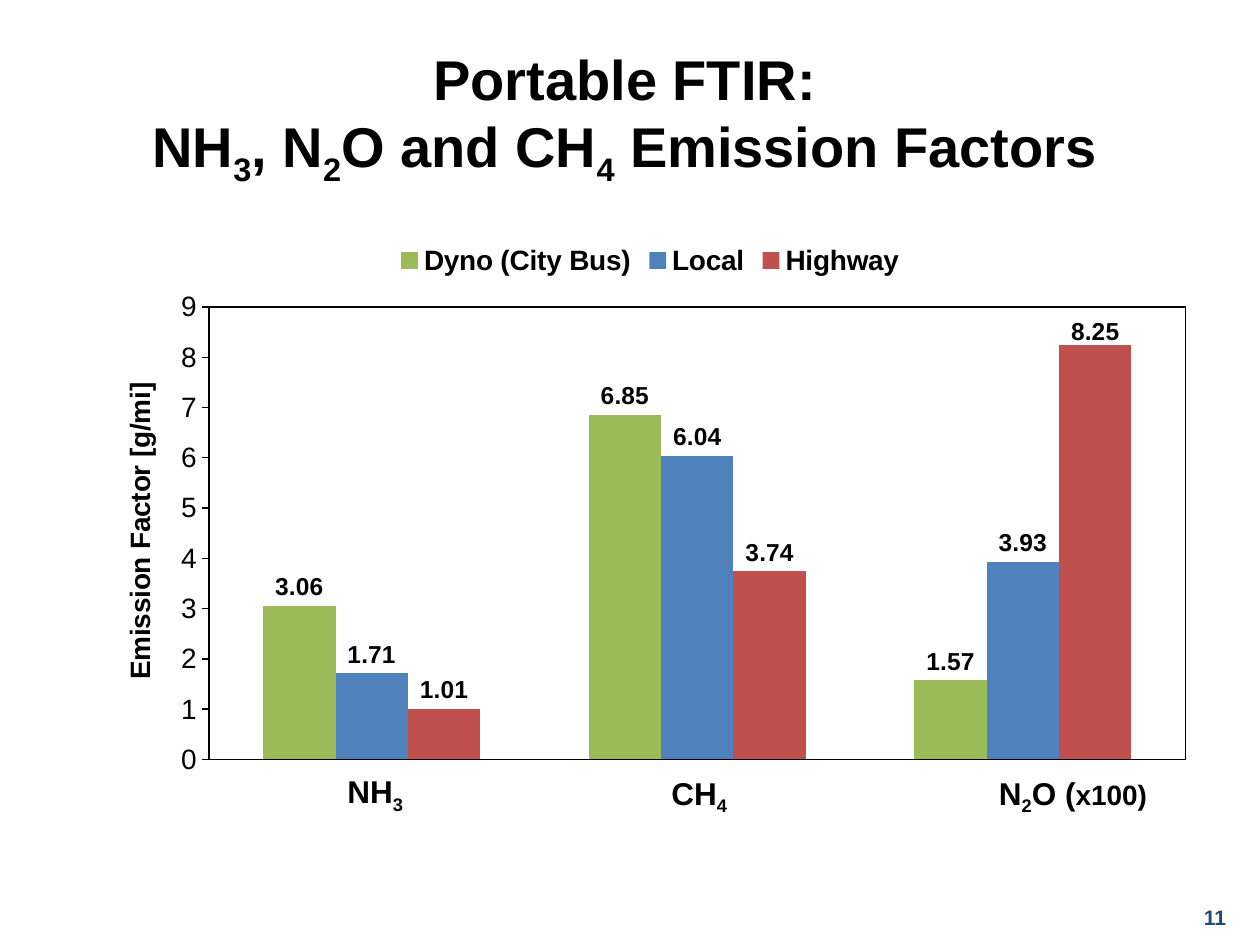
from lxml.etree import SubElement
from pptx import Presentation
from pptx.chart.data import CategoryChartData
from pptx.dml.color import RGBColor
from pptx.enum.chart import (XL_CHART_TYPE, XL_LABEL_POSITION, XL_LEGEND_POSITION,
                             XL_TICK_MARK)
from pptx.enum.text import MSO_ANCHOR, MSO_AUTO_SIZE, PP_ALIGN
from pptx.oxml import parse_xml
from pptx.oxml.ns import nsdecls, qn
from pptx.util import Inches, Pt

BLACK, NAVY = "000000", "1F497D"
# "|" switches between normal text and subscript
TITLE_LINES = ["Portable FTIR:", "NH|3|, N|2|O and CH|4| Emission Factors"]
TITLE_BOX = (0.42, 0.3, 9.08, 1.25)
CHART_BOX = (0.75, 1.83, 8.82, 4.67)
PLOT_SHARES = {"x": 0.103, "y": 0.13, "w": 0.879, "h": 0.769}
AXIS_TITLE = "Emission Factor [g/mi]"
AXIS_TITLE_SHARES = {"x": 0.02, "y": 0.25}
CATEGORIES = ["1", "2", "3"]
SERIES = [
    ("Dyno (City Bus)", "9BBB59", (3.06, 6.85, 1.57)),
    ("Local", "4F81BD", (1.71, 6.04, 3.93)),
    ("Highway", "C0504D", (1.01, 3.74, 8.25)),
]
CATEGORY_LABELS = [
    ("NH|3", "", (2.66, 6.08, 0.66, 0.4)),
    ("CH|4", "", (5.23, 6.09, 0.66, 0.4)),
    ("N|2|O (", "x100)", (7.83, 6.09, 1.4, 0.4)),
]
PAGE_NUMBER, PAGE_NUMBER_BOX = "11", (1.08, 7.08, 8.75, 0.4)


def color(hex_string):
    return RGBColor.from_string(hex_string)


def style(font, size, hex_string=BLACK, bold=True):
    font.name, font.size, font.bold = "Arial", Pt(size), bold
    font.color.rgb = color(hex_string)


def add_formula(paragraph, formula, size):
    """Add runs, with every second part of the formula as a subscript."""
    for index, part in enumerate(formula.split("|")):
        run = paragraph.add_run()
        run.text = part
        style(run.font, size)
        if index % 2:
            run.font._element.set("baseline", "-25000")


def manual_layout(shares, inner=False):
    layout = parse_xml(f"<c:layout {nsdecls('c')}><c:manualLayout/></c:layout>")
    entries = [("layoutTarget", "inner")] if inner else []
    entries += [(f"{side}Mode", "edge") for side in ("x", "y")]
    entries += shares.items()
    for tag, value in entries:
        SubElement(layout[0], qn(f"c:{tag}")).set("val", str(value))
    return layout


def add_text_box(slide, box):
    return slide.shapes.add_textbox(*map(Inches, box)).text_frame


def add_title(slide):
    title = slide.shapes.title
    title.left, title.top, title.width, title.height = map(Inches, TITLE_BOX)
    frame = title.text_frame
    frame.auto_size, frame.word_wrap = MSO_AUTO_SIZE.NONE, True
    frame.vertical_anchor = MSO_ANCHOR.MIDDLE
    paragraph = frame.paragraphs[0]
    paragraph.alignment = PP_ALIGN.CENTER
    for index, line in enumerate(TITLE_LINES):
        if index:
            paragraph.add_line_break()
        add_formula(paragraph, line, 32)


def add_emission_chart(slide):
    data = CategoryChartData(number_format="0.00")
    data.categories = CATEGORIES
    for name, _, values in SERIES:
        data.add_series(name, values)
    chart = slide.shapes.add_chart(XL_CHART_TYPE.COLUMN_CLUSTERED,
                                   *map(Inches, CHART_BOX), data).chart
    style(chart.font, 16)
    chart.has_title = False
    chart.has_legend = True
    chart.legend.position = XL_LEGEND_POSITION.TOP
    chart.legend.include_in_layout = False
    style(chart.legend.font, 16)
    chart.category_axis.visible = False
    format_value_axis(chart.value_axis)
    format_columns(chart.plots[0])

    plot_area = chart._chartSpace.chart.plotArea
    for old_layout in plot_area.findall(qn("c:layout")):
        plot_area.remove(old_layout)
    plot_area.insert(0, manual_layout(PLOT_SHARES, inner=True))
    plot_area.append(parse_xml(
        f'<c:spPr {nsdecls("c", "a")}><a:noFill/><a:ln w="9525"><a:solidFill>'
        f'<a:srgbClr val="{BLACK}"/></a:solidFill></a:ln></c:spPr>'))


def format_value_axis(axis):
    axis.minimum_scale, axis.maximum_scale, axis.major_unit = 0, 9, 1
    axis.has_major_gridlines = False
    axis.major_tick_mark = XL_TICK_MARK.OUTSIDE
    axis.tick_labels.number_format = "0"
    axis.tick_labels.number_format_is_linked = False
    style(axis.tick_labels.font, 16, bold=False)
    axis.format.line.color.rgb = color(BLACK)
    axis.format.line.width = Pt(0.75)
    frame = axis.axis_title.text_frame
    frame.text = AXIS_TITLE
    style(frame.paragraphs[0].runs[0].font, 16)
    title = axis.axis_title._element
    for old_layout in title.findall(qn("c:layout")):
        title.remove(old_layout)
    title.find(qn("c:tx")).addnext(manual_layout(AXIS_TITLE_SHARES))


def format_columns(plot):
    plot.gap_width, plot.overlap = 150, 0
    plot.vary_by_categories = False
    for series, (_, fill, _) in zip(plot.series, SERIES):
        series.format.fill.solid()
        series.format.fill.fore_color.rgb = color(fill)
        series.invert_if_negative = False
        labels = series.data_labels
        labels.show_value = True
        labels.number_format, labels.number_format_is_linked = "0.00", False
        labels.position = XL_LABEL_POSITION.OUTSIDE_END
        style(labels.font, 14)
    # The tallest column's label sits a little closer to its column
    label = plot.series[2].points[2].data_label
    style(label.font, 14)
    label.position = XL_LABEL_POSITION.OUTSIDE_END
    nudge = parse_xml(f'<c:layout {nsdecls("c")}><c:manualLayout><c:x val="0"/>'
                      '<c:y val="0.01"/></c:manualLayout></c:layout>')
    label._dLbl.find(qn("c:idx")).addnext(nudge)


def main():
    presentation = Presentation()
    presentation.slide_width, presentation.slide_height = Inches(10), Inches(7.5)
    slide = presentation.slides.add_slide(presentation.slide_layouts[5])
    add_title(slide)
    add_emission_chart(slide)

    for formula, suffix, box in CATEGORY_LABELS:
        frame = add_text_box(slide, box)
        frame.word_wrap = False
        frame.auto_size = MSO_AUTO_SIZE.SHAPE_TO_FIT_TEXT
        add_formula(frame.paragraphs[0], formula, 18)
        if suffix:
            add_formula(frame.paragraphs[0], suffix, 16)

    frame = add_text_box(slide, PAGE_NUMBER_BOX)
    frame.word_wrap, frame.vertical_anchor = True, MSO_ANCHOR.MIDDLE
    frame.text = PAGE_NUMBER
    frame.paragraphs[0].alignment = PP_ALIGN.RIGHT
    style(frame.paragraphs[0].runs[0].font, 12, NAVY)

    presentation.save("out.pptx")


if __name__ == "__main__":
    main()
